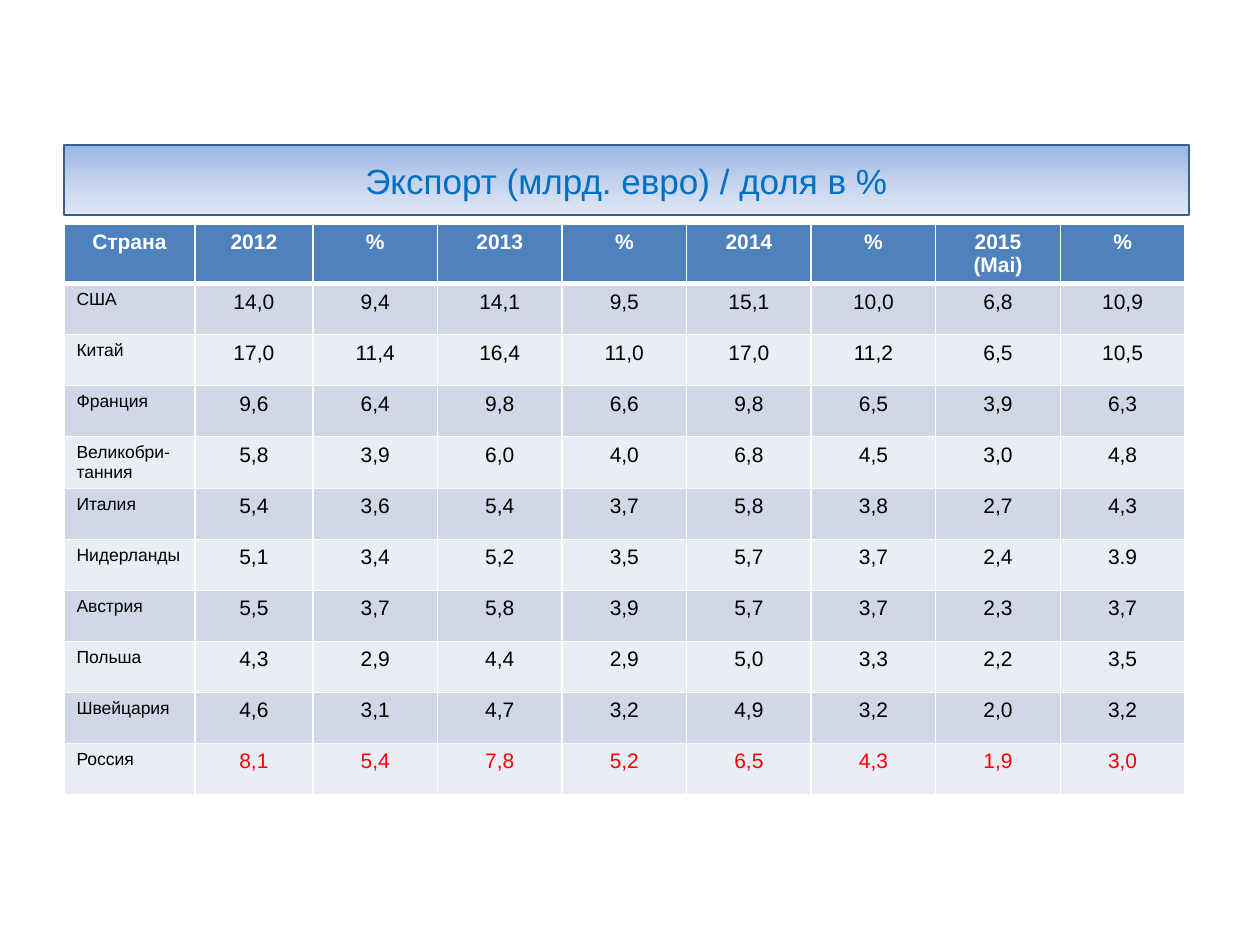
from copy import deepcopy
from dataclasses import dataclass

from lxml import etree
from pptx import Presentation
from pptx import util as u
from pptx.dml.color import RGBColor
from pptx.enum import text
from pptx.oxml.ns import qn

PX_PER_INCH = 126


@dataclass(frozen=True)
class Theme:
    font: str = "Arial"
    title_size: int = 20
    value_size: int = 12
    country_size: int = 10
    title: str = "0070C0"
    banner: tuple = ((0, "9AB5E4"), (0.5, "C2D1ED"), (1, "E1E8F5"))
    banner_line: str = "376092"
    header: str = "4F81BD"
    header_text: str = "FFFFFF"
    bands: tuple = ("D0D8E8", "E9EDF4")
    body_text: str = "000000"
    highlight: str = "FF0000"
    border: str = "FFFFFF"


THEME = Theme()

# Table content and column widths in px
HEADERS = ["Страна", "2012", "%", "2013", "%", "2014", "%", "2015 (Mai)", "%"]
EXPORTS = [
    ("США", "14,0 9,4 14,1 9,5 15,1 10,0 6,8 10,9"),
    ("Китай", "17,0 11,4 16,4 11,0 17,0 11,2 6,5 10,5"),
    ("Франция", "9,6 6,4 9,8 6,6 9,8 6,5 3,9 6,3"),
    ("Великобри-танния", "5,8 3,9 6,0 4,0 6,8 4,5 3,0 4,8"),
    ("Италия", "5,4 3,6 5,4 3,7 5,8 3,8 2,7 4,3"),
    ("Нидерланды", "5,1 3,4 5,2 3,5 5,7 3,7 2,4 3.9"),
    ("Австрия", "5,5 3,7 5,8 3,9 5,7 3,7 2,3 3,7"),
    ("Польша", "4,3 2,9 4,4 2,9 5,0 3,3 2,2 3,5"),
    ("Швейцария", "4,6 3,1 4,7 3,2 4,9 3,2 2,0 3,2"),
    ("Россия", "8,1 5,4 7,8 5,2 6,5 4,3 1,9 3,0"),
]
HIGHLIGHTED = "Россия"
TABLE_WIDTH = 1121
FIRST_COLUMNS = [131, 118]
ROW_HEIGHT = 51


def px(length):
    return u.Emu(round(length * u.Inches(1) / PX_PER_INCH))


def color(value):
    return RGBColor.from_string(value)


def style_paragraph(paragraph, size, font_color, bold=False, centered=True):
    align = text.PP_ALIGN
    paragraph.alignment = align.CENTER if centered else align.LEFT
    font = paragraph.font
    font.name, font.size, font.bold = THEME.font, u.Pt(size), bold
    font.color.rgb = color(font_color)


def fill_gradient(shape, stops):
    shape.fill.gradient()
    shape.fill.gradient_angle = 270
    stop_list = shape.element.spPr.find(".//" + qn("a:gsLst"))
    while len(stop_list) < len(stops):
        stop_list.append(deepcopy(stop_list[-1]))
    for stop, (position, stop_color) in zip(shape.fill.gradient_stops, stops):
        stop.position = position
        stop.color.rgb = color(stop_color)


def format_title(shape, words):
    shape.left, shape.top, shape.width, shape.height = map(px, (64, 145, 1125, 70))
    fill_gradient(shape, THEME.banner)
    shape.line.color.rgb = color(THEME.banner_line)
    shape.line.width = u.Pt(0.75)
    frame = shape.text_frame
    frame.text = words
    frame.word_wrap = True
    frame.auto_size = text.MSO_AUTO_SIZE.NONE
    frame.vertical_anchor = text.MSO_ANCHOR.MIDDLE
    style_paragraph(frame.paragraphs[0], THEME.title_size, THEME.title)


def set_borders(cell, top, bottom):
    properties = cell._tc.get_or_add_tcPr()
    for side, points in (("L", 1), ("R", 1), ("T", top), ("B", bottom)):
        line = etree.SubElement(properties, qn(f"a:ln{side}"), w=str(u.Pt(points)))
        solid = etree.SubElement(line, qn("a:solidFill"))
        etree.SubElement(solid, qn("a:srgbClr"), val=THEME.border)


def fill_row(cells, words, fill, top=1, bottom=1):
    for cell, word in zip(cells, words):
        cell.text = word
        set_borders(cell, top, bottom)
        cell.fill.solid()
        cell.fill.fore_color.rgb = color(fill)


def add_export_table(slide):
    frame = slide.shapes.add_table(
        len(EXPORTS) + 1, len(HEADERS), px(64), px(224),
        px(TABLE_WIDTH), px(ROW_HEIGHT * (len(EXPORTS) + 1)))
    table = frame.table
    table.horz_banding = False

    # The columns after the first two share the remaining width
    shared = len(HEADERS) - len(FIRST_COLUMNS)
    widths = FIRST_COLUMNS + [(TABLE_WIDTH - sum(FIRST_COLUMNS)) / shared] * shared
    for column, width in zip(table.columns, widths):
        column.width = px(width)
    for row in table.rows:
        row.height = px(ROW_HEIGHT)

    # Header row, with a heavier rule below
    header, *body = table.rows
    fill_row(header.cells, HEADERS, THEME.header, bottom=3)
    for cell in header.cells:
        style_paragraph(cell.text_frame.paragraphs[0], THEME.value_size,
                        THEME.header_text, bold=True)

    # Country rows in alternating bands
    for index, (row, (country, values)) in enumerate(zip(body, EXPORTS)):
        fill_row(row.cells, [country, *values.split()], THEME.bands[index % 2],
                 top=1 if index else 3)
        name, *numbers = [cell.text_frame.paragraphs[0] for cell in row.cells]
        style_paragraph(name, THEME.country_size, THEME.body_text, centered=False)
        number_color = THEME.highlight if country == HIGHLIGHTED else THEME.body_text
        for paragraph in numbers:
            style_paragraph(paragraph, THEME.value_size, number_color)


def main():
    presentation = Presentation()
    presentation.slide_width, presentation.slide_height = u.Inches(10), u.Inches(7.5)
    slide = presentation.slides.add_slide(presentation.slide_layouts[5])
    format_title(slide.shapes.title, "Экспорт (млрд. евро) / доля в %")
    add_export_table(slide)
    presentation.save("out.pptx")


if __name__ == "__main__":
    main()
